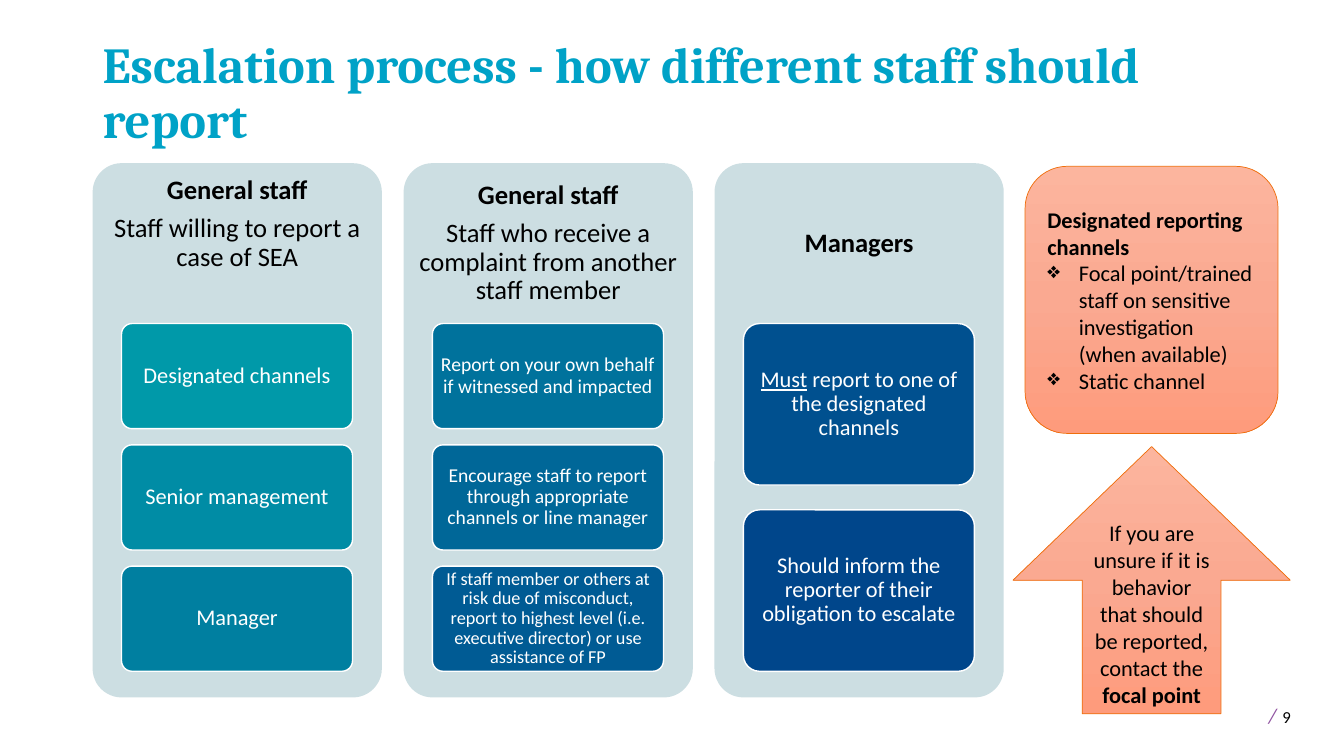
import pptx
import pptx.util
import pptx.dml.color
import pptx.enum.shapes
import pptx.enum.text
import pptx.oxml
import copy

Pt = pptx.util.Pt
RGB = pptx.dml.color.RGBColor
Shape = pptx.enum.shapes.MSO_SHAPE
Align = pptx.enum.text.PP_ALIGN
Anchor = pptx.enum.text.MSO_ANCHOR

BLACK = RGB(0x00, 0x00, 0x00)
WHITE = RGB(0xFF, 0xFF, 0xFF)
TITLE_BLUE = RGB(0x00, 0xA2, 0xC7)
PANEL_GREY = RGB(0xCC, 0xDE, 0xE2)
SLASH_PURPLE = RGB(0x90, 0x53, 0xA1)
ORANGE = RGB(0xEF, 0x6E, 0x0B)
PEACHES = [RGB(0xFC, 0xB5, 0x9E), RGB(0xFA, 0xA9, 0x91), RGB(0xFE, 0x9B, 0x7C)]
CARD_BLUES = [
    [RGB(0x00, 0x99, 0xA9), RGB(0x00, 0x8C, 0xA5), RGB(0x00, 0x7F, 0xA0)],
    [RGB(0x00, 0x72, 0x9C), RGB(0x00, 0x67, 0x98), RGB(0x00, 0x5B, 0x94)],
    [RGB(0x00, 0x50, 0x8F), RGB(0x00, 0x46, 0x8B)],
]

COLUMN_LEFT, COLUMN_PITCH, COLUMN_WIDTH = 66.2, 222.1, 206.6
COLUMN_TOP, COLUMN_HEIGHT, HEADING_HEIGHT = 116.6, 381.6, 114.5
CARDS_HEIGHT, CARD_INDENT, CARD_WIDTH = 248.4, 20.6, 165
GAP_RATIO = 2 / 13

COLUMNS = [
    ([[("General staff", "b")], [("Staff willing to report a case of SEA", "")]], 33.5, [
        ([("Designated channels", "")], 16),
        ([("Senior management", "")], 16),
        ([("Manager", "")], 16),
    ]),
    ([[("General staff", "b")],
      [("Staff who receive a complaint from another staff member", "")]], 6, [
        ([("Report on your own behalf if witnessed and impacted", "")], 14),
        ([("Encourage staff to report through appropriate channels or line manager", "")], 14),
        ([("If staff member or others at risk due of misconduct, report to highest level "
           "(i.e. executive director) or use assistance of FP", "")], 13),
    ]),
    ([[("Managers", "b")]], 6, [
        ([("Must", "u"), (" report to one of the designated channels", "")], 16),
        ([("Should inform the reporter of their obligation to escalate", "")], 16),
    ]),
]


class SlidePainter:
    """Holds the text style and the current slide, and draws each kind of element."""

    def __init__(self, page, font="Calibri"):
        self.page = page
        self.font = font

    def span(self, para, text, size, color, style="", font=None):
        run = para.add_run()
        run.text = text
        run.font.name = font or self.font
        run.font.size = Pt(size)
        run.font.color.rgb = color
        run.font.bold = "b" in style
        run.font.italic = "i" in style
        run.font.underline = "u" in style

    def frame(self, box, anchor, insets=(7.2, 3.6, 7.2, 3.6)):
        frame = box.text_frame
        frame.word_wrap = True
        frame.vertical_anchor = anchor
        frame.margin_left, frame.margin_top, frame.margin_right, frame.margin_bottom = map(Pt, insets)
        return frame

    def paragraphs(self, frame, paragraphs, size, color, align=Align.CENTER, spacing=1.0,
                   after=0, font=None):
        for index, spans in enumerate(paragraphs):
            para = frame.paragraphs[0] if index == 0 else frame.add_paragraph()
            para.alignment = align
            para.line_spacing = spacing
            para.space_after = Pt(after if index < len(paragraphs) - 1 else 0)
            for text, style in spans:
                self.span(para, text, size, color, style, font)

    def text_box(self, left, top, width, height, anchor, insets=(7.2, 3.6, 7.2, 3.6)):
        box = self.page.shapes.add_textbox(Pt(left), Pt(top), Pt(width), Pt(height))
        return self.frame(box, anchor, insets)

    def shape(self, kind, left, top, width, height, line=None, line_width=1):
        shape = self.page.shapes.add_shape(kind, Pt(left), Pt(top), Pt(width), Pt(height))
        shape.shadow.inherit = False
        if line is None:
            shape.line.fill.background()
        else:
            shape.line.color.rgb = line
            shape.line.width = Pt(line_width)
        return shape

    def rounded(self, left, top, width, height, fill, line=None):
        shape = self.shape(Shape.ROUNDED_RECTANGLE, left, top, width, height, line)
        shape.adjustments[0] = 0.1
        shape.fill.solid()
        shape.fill.fore_color.rgb = fill
        return shape

    def callout(self, kind, left, top, width, height):
        shape = self.shape(kind, left, top, width, height, ORANGE, 0.5)
        shape.fill.gradient()
        shape.fill.gradient_angle = 270
        first = shape._element.spPr.xpath("a:gradFill/a:gsLst/a:gs")[0]
        first.addnext(copy.deepcopy(first))
        for index, (stop, color) in enumerate(zip(shape.fill.gradient_stops, PEACHES)):
            stop.position = index / 2
            stop.color.rgb = color
        return self.frame(shape, Anchor.MIDDLE)

    def bullet(self, para, indent=22.5):
        properties = para._p.get_or_add_pPr()
        properties.set("marL", str(Pt(indent)))
        properties.set("indent", str(-Pt(indent)))
        mark = pptx.oxml.parse_xml(
            '<a:buChar xmlns:a="http://schemas.openxmlformats.org/drawingml/2006/main" char="❖"/>')
        properties.append(mark)

    def column(self, left, heading, bottom_inset, cards, colors):
        self.rounded(left, COLUMN_TOP, COLUMN_WIDTH, COLUMN_HEIGHT, PANEL_GREY)
        frame = self.text_box(left, COLUMN_TOP, COLUMN_WIDTH, HEADING_HEIGHT, Anchor.MIDDLE,
                              (6, 6, 6, bottom_inset))
        self.paragraphs(frame, heading, 19, BLACK, spacing=0.9, after=6.65)
        count = len(cards)
        height = CARDS_HEIGHT / (count + (count - 1) * GAP_RATIO)
        for index, ((spans, size), color) in enumerate(zip(cards, colors)):
            top = COLUMN_TOP + HEADING_HEIGHT + index * height * (1 + GAP_RATIO)
            card = self.rounded(left + CARD_INDENT, top, CARD_WIDTH, height, color, WHITE)
            frame = self.frame(card, Anchor.MIDDLE, (3, 2.2, 3, 2.2))
            self.paragraphs(frame, [spans], size, WHITE, spacing=0.9)


def main():
    deck = pptx.Presentation()
    deck.slide_width, deck.slide_height = Pt(960), Pt(540)
    painter = SlidePainter(deck.slides.add_slide(deck.slide_layouts[6]))

    title = painter.text_box(66.2, 28.8, 828, 81.4, Anchor.BOTTOM)
    painter.paragraphs(title, [[("Escalation process - how different staff should report", "b")]],
                       36, TITLE_BLUE, Align.LEFT, 0.9, font="Cambria")

    for index, ((heading, inset, cards), colors) in enumerate(zip(COLUMNS, CARD_BLUES)):
        painter.column(COLUMN_LEFT + index * COLUMN_PITCH, heading, inset, cards, colors)

    channels = painter.callout(Shape.ROUNDED_RECTANGLE, 732.2, 118.8, 180.7, 190.8)
    painter.paragraphs(channels, [
        [("Designated reporting channels", "b")],
        [("Focal point/trained staff on sensitive investigation (when available)", "")],
        [("Static channel", "")],
    ], 16, BLACK, Align.LEFT)
    for para in channels.paragraphs[1:]:
        painter.bullet(para)

    arrow = painter.callout(Shape.UP_ARROW, 723.6, 319, 198, 190.8)
    painter.paragraphs(arrow, [[
        ("If you are unsure if it is behavior that should be reported, contact the ", ""),
        ("focal point", "b"),
    ]], 16, BLACK)

    number = painter.text_box(895, 495.4, 62.6, 28.8, Anchor.TOP, (11.2, 3.6, 7.2, 3.6))
    para = number.paragraphs[0]
    painter.span(para, "/", 15, SLASH_PURPLE, "i")
    painter.span(para, " ", 18, BLACK)
    painter.span(para, "9", 12, BLACK)

    deck.save("out.pptx")


if __name__ == "__main__":
    main()
